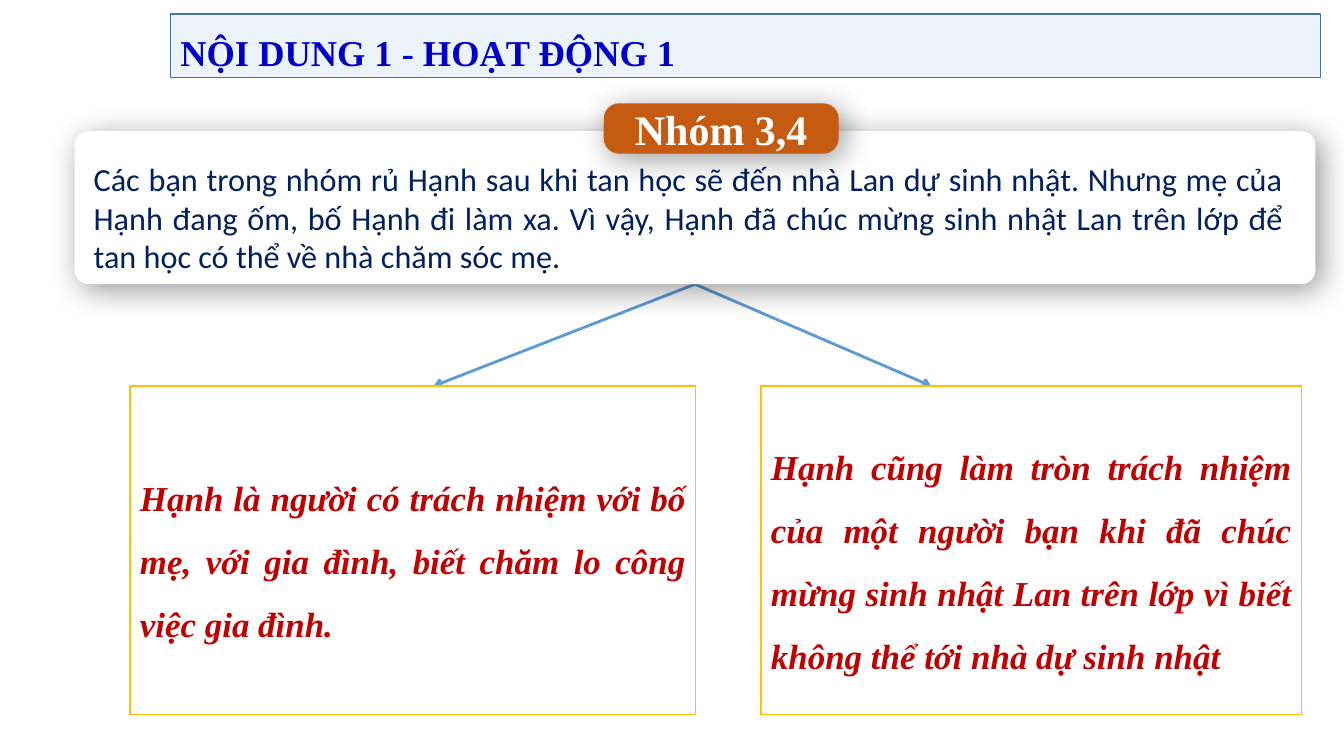
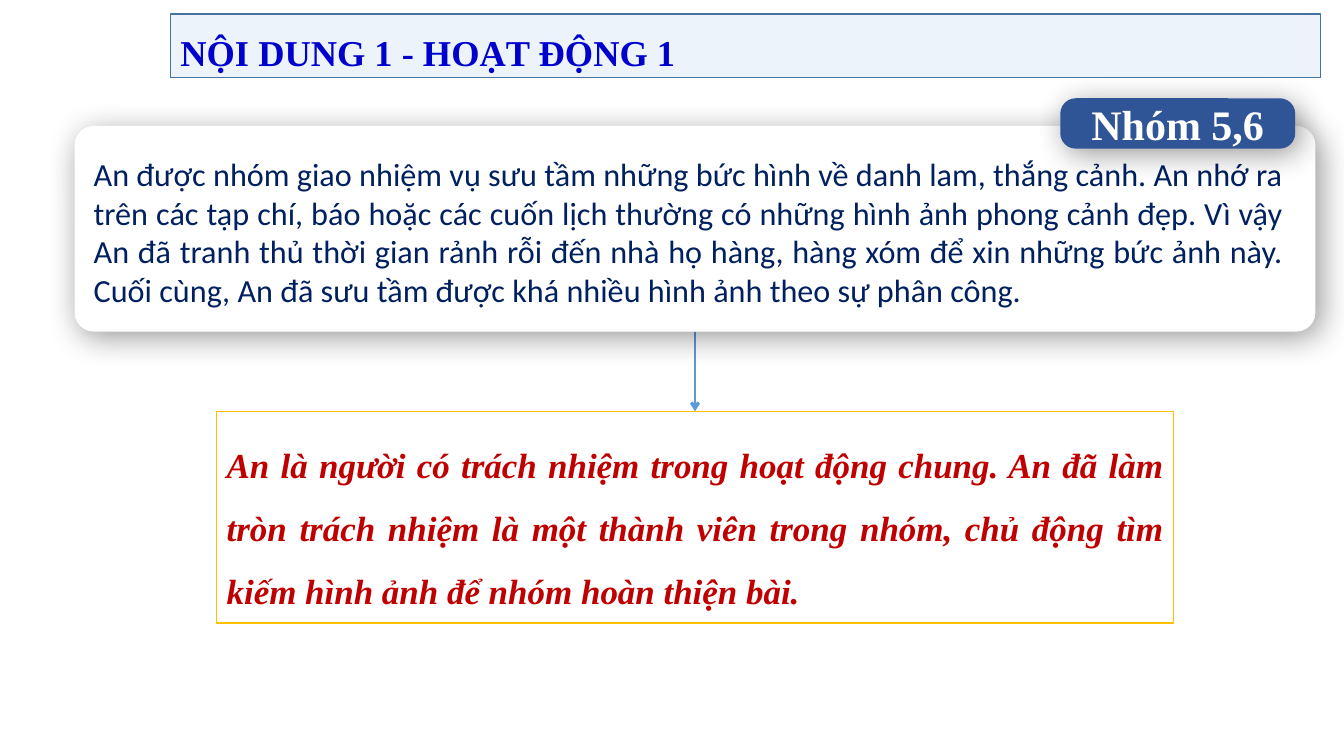
from lxml.etree import SubElement
from pptx import Presentation
from pptx.dml.color import RGBColor
from pptx.enum.shapes import MSO_CONNECTOR, MSO_SHAPE
from pptx.enum.text import MSO_ANCHOR, MSO_AUTO_SIZE, PP_ALIGN
from pptx.oxml import parse_xml
from pptx.oxml.ns import nsdecls, qn
from pptx.util import Pt

COLORS = {
    "band": "ECF3FA", "band_edge": "43739E", "title": "0000CC",
    "white": "FFFFFF", "case": "002060", "answer": "C00000",
    "answer_edge": "FFC000", "arrow": "5B9BD5",
    "orange": "C55A11", "blue": "2F5597",
}
SERIF, SANS = "Times New Roman", "Calibri"
TITLE = "NỘI DUNG 1 - HOẠT ĐỘNG 1"
CARD_LEFT, CARD_WIDTH = 53.3, 886.3
BOTTOM, TOP = 2, 0  # connection sites of a rectangle

SLIDES = [
    {
        "group": "Nhóm 3,4", "badge_left": 431.3, "badge_color": "orange",
        "card_top": 93.6, "card_height": 109.4,
        "case": "Các bạn trong nhóm rủ Hạnh sau khi tan học sẽ đến nhà Lan dự "
                "sinh nhật. Nhưng mẹ của Hạnh đang ốm, bố Hạnh đi làm xa. Vì "
                "vậy, Hạnh đã chúc mừng sinh nhật Lan trên lớp để tan học có "
                "thể về nhà chăm sóc mẹ.",
        "answers": [
            {"text": "Hạnh là người có trách nhiệm với bố mẹ, với gia đình, "
                     "biết chăm lo công việc gia đình.",
             "box": (92.9, 275.8, 403.9, 234.7), "arrow_x": 309.6},
            {"text": "Hạnh cũng làm tròn trách nhiệm của một người bạn khi đã "
                     "chúc mừng sinh nhật Lan trên lớp vì biết không thể tới "
                     "nhà dự sinh nhật",
             "box": (543.6, 275.8, 385.9, 234.7), "arrow_x": 665.3},
        ],
    },
    {
        "group": "Nhóm 5,6", "badge_left": 757.4, "badge_color": "blue",
        "card_top": 90, "card_height": 146.9,
        "case": "An được nhóm giao nhiệm vụ sưu tầm những bức hình về danh "
                "lam, thắng cảnh. An nhớ ra trên các tạp chí, báo hoặc các "
                "cuốn lịch thường có những hình ảnh phong cảnh đẹp. Vì vậy An "
                "đã tranh thủ thời gian rảnh rỗi đến nhà họ hàng, hàng xóm để "
                "xin những bức ảnh này. Cuối cùng, An đã sưu tầm được khá "
                "nhiều hình ảnh theo sự phân công.",
        "answers": [
            {"text": "An là người có trách nhiệm trong hoạt động chung. An đã "
                     "làm tròn trách nhiệm là một thành viên trong nhóm, chủ "
                     "động tìm kiếm hình ảnh để nhóm hoàn thiện bài.",
             "box": (154.8, 293.8, 683.3, 151.2)},
        ],
    },
]


def rgb(name):
    return RGBColor.from_string(COLORS[name])


def points(box):
    return [Pt(length) for length in box]


def write(shape, text, *, size, color, font=SERIF, bold=False, italic=False,
          align=PP_ALIGN.LEFT, anchor=MSO_ANCHOR.MIDDLE, spacing=1.0):
    frame = shape.text_frame
    frame.word_wrap = True
    frame.auto_size = MSO_AUTO_SIZE.NONE
    frame.vertical_anchor = anchor
    paragraph = frame.paragraphs[0]
    paragraph.alignment = align
    paragraph.line_spacing = spacing
    run = paragraph.add_run()
    run.text = text
    run.font.name = font
    run.font.size = Pt(size)
    run.font.bold = bold
    run.font.italic = italic
    run.font.color.rgb = rgb(color)


def paint(shape, fill, edge=None):
    shape.fill.solid()
    shape.fill.fore_color.rgb = rgb(fill)
    if edge:
        shape.line.color.rgb = rgb(edge)
        shape.line.width = Pt(1)
    else:
        shape.line.fill.background()


def add_panel(slide, kind, box, fill, edge=None):
    panel = slide.shapes.add_shape(kind, *points(box))
    panel.shadow.inherit = False
    paint(panel, fill, edge)
    return panel


def add_floating_panel(slide, box, fill, rounding):
    """Add a borderless rounded rectangle with a soft shadow."""
    panel = add_panel(slide, MSO_SHAPE.ROUNDED_RECTANGLE, box, fill)
    panel.adjustments[0] = rounding
    effects = panel.element.spPr.find(qn("a:effectLst"))
    effects.append(parse_xml(
        f'<a:outerShdw {nsdecls("a")} blurRad="{Pt(22)}" dist="{Pt(5)}" '
        'dir="2700000" algn="tl" rotWithShape="0"><a:srgbClr val="000000">'
        '<a:alpha val="40000"/></a:srgbClr></a:outerShdw>'))
    return panel


def set_title(slide):
    """Turn the title placeholder into the rounded heading band."""
    title = slide.shapes.title
    title.left, title.top, title.width, title.height = points(
        (121.7, 10.1, 821.5, 45.4))
    title.element.spPr.append(parse_xml(
        f'<a:prstGeom {nsdecls("a")} prst="roundRect"><a:avLst/></a:prstGeom>'))
    paint(title, "band", "band_edge")
    write(title, TITLE, size=26, color="title", bold=True, spacing=1.2)
    title.text_frame.margin_top = Pt(6.5)


def add_answer(slide, text, box):
    answer = add_panel(slide, MSO_SHAPE.RECTANGLE, box, "white", "answer_edge")
    write(answer, text, size=25, color="answer", bold=True, italic=True,
          align=PP_ALIGN.JUSTIFY, spacing=1.5)
    return answer


def add_case(slide, text, top, height):
    card = add_floating_panel(
        slide, (CARD_LEFT, top, CARD_WIDTH, height), "white", 0.093)
    case = slide.shapes.add_textbox(*points(
        (CARD_LEFT + 6.5, top + 16.6, CARD_WIDTH - 20.9, height - 20)))
    write(case, text, size=23, color="case", font=SANS,
          align=PP_ALIGN.JUSTIFY, anchor=MSO_ANCHOR.TOP)
    return card


def add_badge(slide, text, left, card_top, color):
    badge = add_floating_panel(
        slide, (left, card_top - 19.8, 167.8, 36), color, 0.307)
    write(badge, text, size=30, color="white", bold=True,
          align=PP_ALIGN.CENTER)


def add_arrow(slide, card, answer, end_x=None):
    """Lead from the card to end_x on the answer's top, or to its middle."""
    arrow = slide.shapes.add_connector(
        MSO_CONNECTOR.STRAIGHT, card.left + card.width // 2,
        card.top + card.height, Pt(end_x or 0), answer.top)
    arrow.begin_connect(card, BOTTOM)
    if end_x is None:
        arrow.end_connect(answer, TOP)
    arrow.line.color.rgb = rgb("arrow")
    arrow.line.width = Pt(2)
    SubElement(arrow.line._get_or_add_ln(), qn("a:tailEnd"), type="arrow")
    SubElement(arrow.element.spPr, qn("a:effectLst"))
    answer.element.addprevious(arrow.element)


def add_group_slide(deck, content):
    slide = deck.slides.add_slide(deck.slide_layouts[5])
    set_title(slide)
    answers = [add_answer(slide, answer["text"], answer["box"])
               for answer in content["answers"]]
    card = add_case(slide, content["case"], content["card_top"],
                    content["card_height"])
    add_badge(slide, content["group"], content["badge_left"],
              content["card_top"], content["badge_color"])
    for answer, details in zip(answers, content["answers"]):
        add_arrow(slide, card, answer, details.get("arrow_x"))


def main():
    deck = Presentation()
    deck.slide_width, deck.slide_height = Pt(960), Pt(540)
    for content in SLIDES:
        add_group_slide(deck, content)
    deck.save("out.pptx")


if __name__ == "__main__":
    main()
